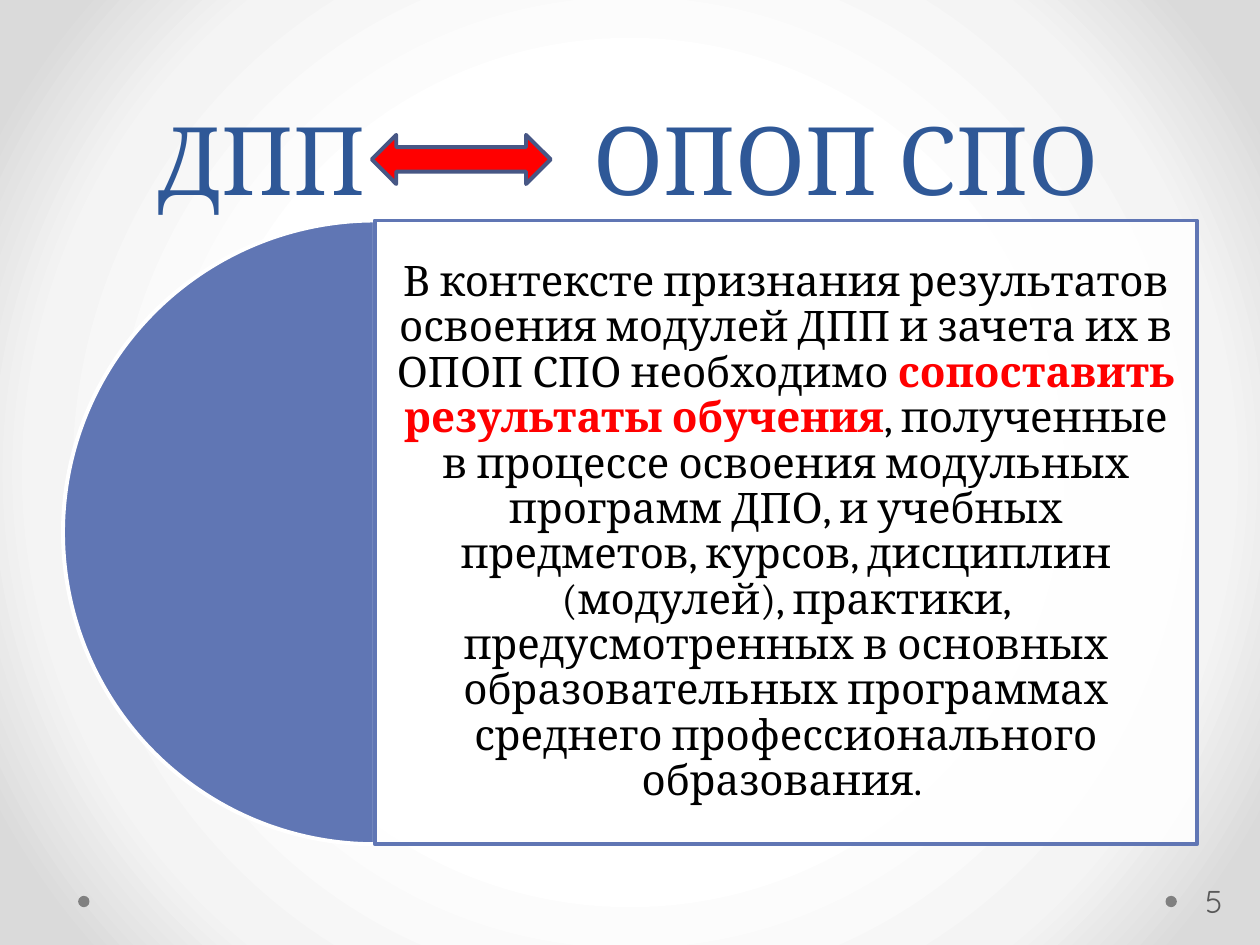
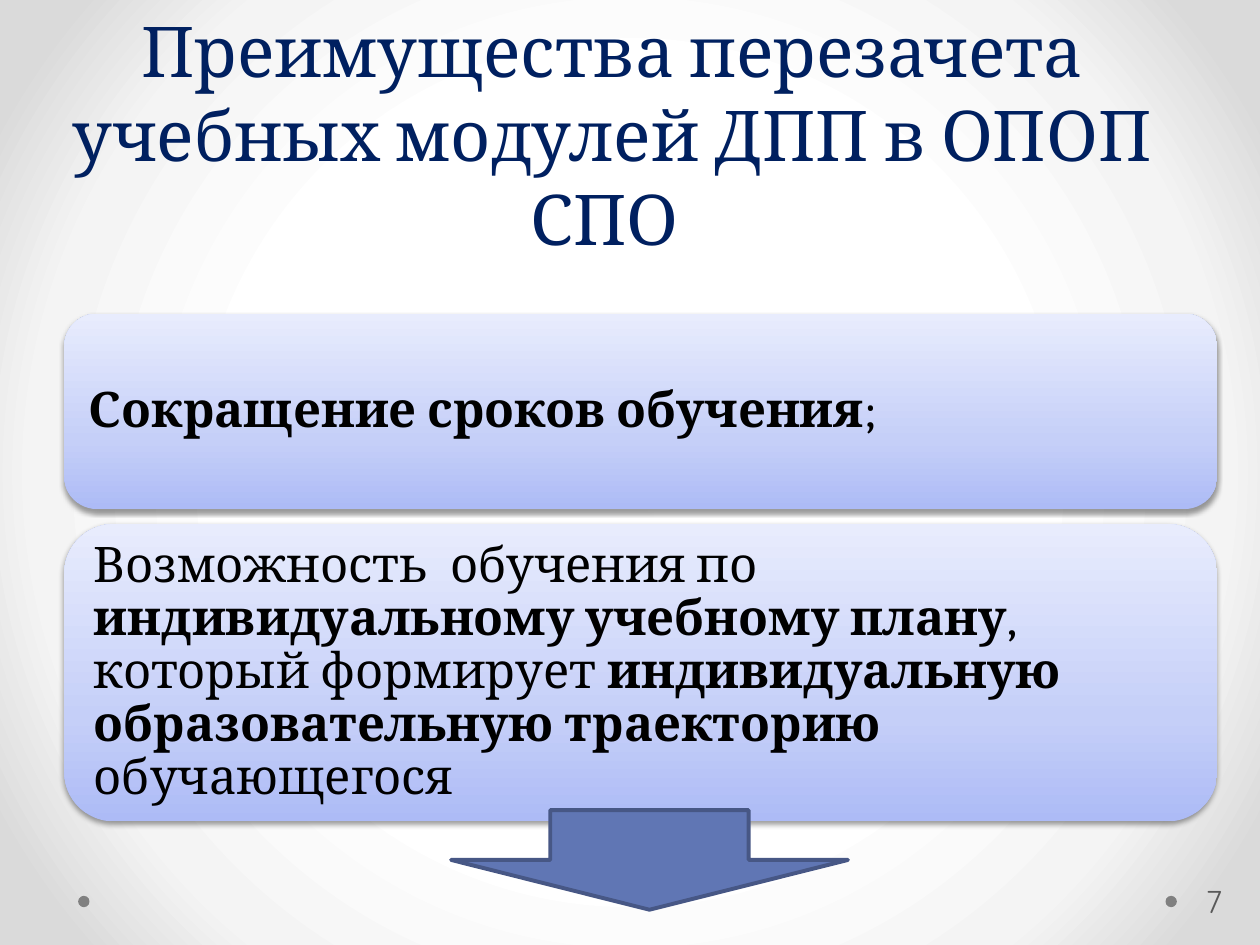
import pptx
import pptx.dml.color
import pptx.enum.shapes
import pptx.enum.text
import pptx.oxml.ns
import pptx.util
from lxml import etree

Inches = pptx.util.Inches
Pt = pptx.util.Pt
RGB = pptx.dml.color.RGBColor
Shape = pptx.enum.shapes.MSO_SHAPE
Align = pptx.enum.text.PP_ALIGN
Anchor = pptx.enum.text.MSO_ANCHOR
qn = pptx.oxml.ns.qn

WHITE = RGB(0xFF, 0xFF, 0xFF)
BLACK = RGB(0, 0, 0)
RED = RGB(0xFF, 0, 0)
BLUE = RGB(0x60, 0x76, 0xB4)
DARK_BLUE = RGB(0x47, 0x57, 0x85)
TITLE_BLUE = RGB(0x2F, 0x58, 0x97)
NAVY = RGB(0, 0x20, 0x60)
DOT_GRAY = RGB(0x80, 0x80, 0x80)
NUMBER_GRAY = RGB(0x59, 0x59, 0x59)
BACKDROP_STOPS = [(50, WHITE), (76, RGB(0xF4, 0xF4, 0xF4)), (92, RGB(0xDA, 0xDA, 0xDA))]
CARD_STOPS = [(0, RGB(0xAD, 0xBB, 0xF6)), (35, RGB(0xC5, 0xCF, 0xF8)),
              (100, RGB(0xE8, 0xEC, 0xFD))]
SERIF = "Cambria"
SANS = "Quicksand"
OUTLINE = 2.25


def add_xml(parent, tag, **attributes):
    return etree.SubElement(parent, qn(tag), {k: str(v) for k, v in attributes.items()})


def paint_gradient(fill, owner, stops):
    """Fill with the stops and return the gradient element, still without direction."""
    fill.gradient()
    gradient = next(owner.iter(qn("a:gradFill")))
    gradient.clear()
    stop_list = add_xml(gradient, "a:gsLst")
    for position, color in stops:
        stop = add_xml(stop_list, "a:gs", pos=position * 1000)
        add_xml(stop, "a:srgbClr", val=color)
    return gradient


def paint_backdrop(master):
    gradient = paint_gradient(master.background.fill, master.element, BACKDROP_STOPS)
    circle = add_xml(gradient, "a:path", path="circle")
    add_xml(circle, "a:fillToRect", l=50000, t=50000, r=50000, b=50000)


def add_figure(slide, kind, box, fill=None, line=None):
    figure = slide.shapes.add_shape(kind, *map(Inches, box))
    figure.shadow.inherit = False
    if fill is not None:
        figure.fill.solid()
        figure.fill.fore_color.rgb = fill
    if line is None:
        figure.line.fill.background()
    else:
        figure.line.color.rgb = line
        figure.line.width = Pt(OUTLINE)
    return figure


def write(frame, pieces, size, align, anchor=Anchor.MIDDLE, font=SERIF, inset=None):
    """Write one paragraph of (text, colour, bold) pieces."""
    frame.word_wrap = True
    frame.vertical_anchor = anchor
    if inset is not None:
        frame.margin_left = frame.margin_right = Inches(inset)
        frame.margin_top = frame.margin_bottom = Inches(inset)
    paragraph = frame.paragraphs[0]
    paragraph.alignment = align
    for text, color, bold in pieces:
        run = paragraph.add_run()
        run.text = text
        run.font.name = font
        run.font.size = Pt(size)
        run.font.color.rgb = color
        run.font.bold = bold
    return paragraph


def add_title(slide, box, text, size, color, align=Align.CENTER):
    title = slide.shapes.add_textbox(*map(Inches, box))
    return write(title.text_frame, [(text, color, False)], size, align, Anchor.BOTTOM)


def add_footer(slide, number):
    for left in (0.62, 9.25):
        add_figure(slide, Shape.OVAL, (left, 7.11, 0.09, 0.09), DOT_GRAY)
    page = slide.shapes.add_textbox(Inches(9.34), Inches(6.95), Inches(0.61), Inches(0.4))
    write(page.text_frame, [(number, NUMBER_GRAY, False)], 18, Align.CENTER,
          font=SANS, inset=0.05)
    page.text_frame.margin_left = Inches(0.03)


def add_half_disc_panel(slide, box, pieces):
    """Half disc on the left, as high as the box, with a text panel from its centre on."""
    left, top, width, height = box
    radius = height / 2
    disc = add_figure(slide, Shape.PIE, (left, top, height, height), BLUE, WHITE)
    disc.adjustments[0], disc.adjustments[1] = 54, 162
    panel = add_figure(slide, Shape.RECTANGLE,
                       (left + radius, top, width - radius, height), WHITE, BLUE)
    color = panel.fill._xPr.find(qn("a:solidFill"))[0]
    add_xml(color, "a:alpha", val=90000)
    write(panel.text_frame, pieces, 24, Align.CENTER, inset=0.1).line_spacing = 0.9


def add_card(slide, box, pieces):
    card = add_figure(slide, Shape.ROUNDED_RECTANGLE, box)
    properties = card.element.spPr
    gradient = paint_gradient(card.fill, properties, CARD_STOPS)
    add_xml(gradient, "a:lin", ang=270 * 60000, scaled=1)
    shadow = add_xml(properties.find(qn("a:effectLst")), "a:outerShdw", blurRad=Pt(3.1),
                     dist=Pt(1.6), dir=90 * 60000, rotWithShape=0)
    add_xml(add_xml(shadow, "a:srgbClr", val=BLACK), "a:alpha", val=38000)
    write(card.text_frame, pieces, 28, Align.LEFT, inset=0.12).line_spacing = 0.9


def build_comparison(slide):
    add_footer(slide, "5")
    title = add_title(slide, (1.15, 0.29, 8.35, 1.46), "ДПП\tОПОП СПО", 54,
                      TITLE_BLUE, Align.LEFT)
    tabs = add_xml(title._p.get_or_add_pPr(), "a:tabLst")
    add_xml(tabs, "a:tab", pos=Inches(3.46), algn="l")
    add_half_disc_panel(slide, (0.5, 1.75, 9, 4.95), [
        ("В контексте признания результатов освоения модулей ДПП и зачета их в "
         "ОПОП СПО необходимо ", BLACK, False),
        ("сопоставить результаты обучения", RED, True),
        (", полученные в процессе освоения модульных программ ДПО, и учебных "
         "предметов, курсов, дисциплин (модулей), практики, предусмотренных в "
         "основных образовательных программах среднего профессионального "
         "образования. ", BLACK, False)])
    add_figure(slide, Shape.LEFT_RIGHT_ARROW, (2.95, 1.07, 1.42, 0.39), RED, DARK_BLUE)


def build_benefits(slide):
    add_footer(slide, "7")
    add_title(slide, (0.28, 0, 9.16, 2.11),
              "Преимущества перезачета учебных модулей ДПП в ОПОП СПО ", 40, NAVY)
    add_card(slide, (0.51, 2.49, 9.15, 1.55), [
        ("Сокращение сроков обучения", BLACK, True),
        (";", BLACK, False)])
    add_card(slide, (0.51, 4.16, 9.15, 2.36), [
        ("Возможность  обучения по ", BLACK, False),
        ("индивидуальному учебному плану", BLACK, True),
        (", который формирует ", BLACK, False),
        ("индивидуальную образовательную траекторию ", BLACK, True),
        ("обучающегося", BLACK, False)])
    add_figure(slide, Shape.DOWN_ARROW, (3.58, 6.43, 3.15, 0.79), BLUE, DARK_BLUE)


def main():
    deck = pptx.Presentation()
    deck.slide_width, deck.slide_height = Inches(10), Inches(7.5)
    paint_backdrop(deck.slide_master)
    blank = deck.slide_layouts[6]
    for build in (build_comparison, build_benefits):
        build(deck.slides.add_slide(blank))
    deck.save("out.pptx")


if __name__ == "__main__":
    main()
